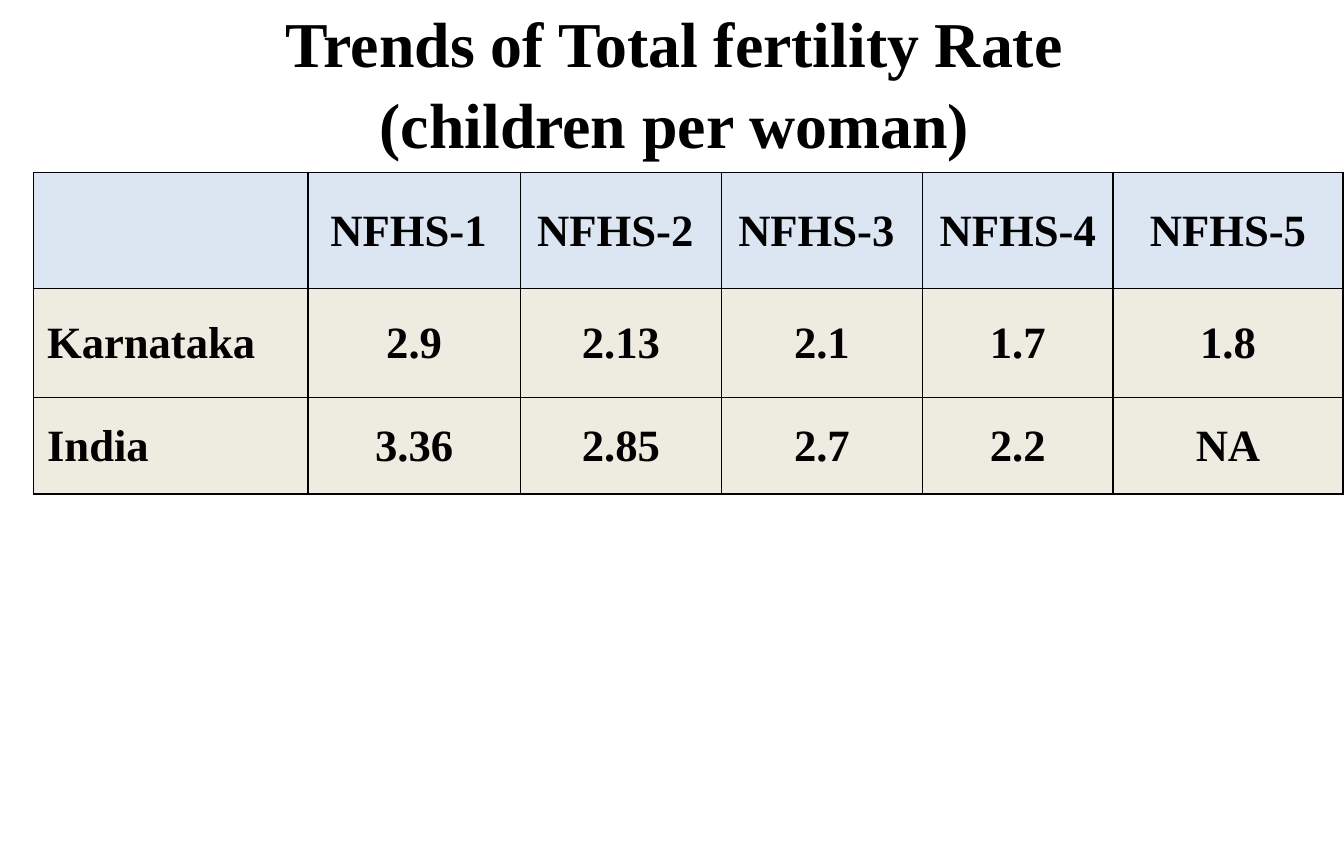
from lxml import etree
from pptx import Presentation
from pptx.dml.color import RGBColor
from pptx.enum import text
from pptx.oxml import ns
from pptx.util import Inches, Pt

HEADING = "Trends of Total fertility Rate \v(children per woman) "
FERTILITY = [
    ["", "NFHS-1 ", "NFHS-2 ", "NFHS-3 ", "NFHS-4", "NFHS-5"],
    ["Karnataka", "2.9", "2.13", "2.1", "1.7", "1.8"],
    ["India", "3.36", "2.85", "2.7", "2.2", "NA"],
]
SURVEY_WIDTHS = [2.39, 1.85, 1.75, 1.75, 1.66, 2]
REGION_HEIGHTS = [1.01, 0.95, 0.84]

THEME = {
    "font": "Times New Roman",
    "ink": "000000",
    "header": "DCE6F2",
    "body": "EEECE1",
    "title_size": 40,
    "cell_size": 28,
    "border": 1,
}
HEADER_MARGINS = dict(zip(("left", "top", "right", "bottom"), (0.01, 0.01, 0.01, 0)))
BODY_MARGINS = dict(zip(("left", "top", "right", "bottom"), (0.12, 0.05, 0.12, 0.05)))


def apply(target, formats):
    for name, value in formats.items():
        setattr(target, name, value)


def style(paragraph, size, align):
    paragraph.alignment = align
    for run in paragraph.runs:
        apply(run.font, {"name": THEME["font"], "size": Pt(size), "bold": True})
        run.font.color.rgb = RGBColor.from_string(THEME["ink"])


def add_borders(cell):
    properties = cell._tc.get_or_add_tcPr()
    for side in ("lnL", "lnR", "lnT", "lnB"):
        line = etree.SubElement(properties, ns.qn("a:" + side), w=str(Pt(THEME["border"])))
        fill = etree.SubElement(line, ns.qn("a:solidFill"))
        etree.SubElement(fill, ns.qn("a:srgbClr"), val=THEME["ink"])


def add_heading(slide):
    heading = slide.shapes.title
    apply(heading, {"left": Inches(1.75), "top": Inches(0),
                    "width": Inches(8.38), "height": Inches(1.45)})
    frame = heading.text_frame
    apply(frame, {"text": HEADING, "word_wrap": True,
                  "auto_size": text.MSO_AUTO_SIZE.NONE,
                  "vertical_anchor": text.MSO_ANCHOR.BOTTOM})
    paragraph = frame.paragraphs[0]
    paragraph.line_spacing = 1.05
    style(paragraph, THEME["title_size"], text.PP_ALIGN.CENTER)


def add_fertility_table(slide):
    fertility = slide.shapes.add_table(
        len(FERTILITY), len(SURVEY_WIDTHS), Inches(0.29), Inches(1.5),
        Inches(sum(SURVEY_WIDTHS)), Inches(sum(REGION_HEIGHTS))).table
    for survey, width in zip(fertility.columns, SURVEY_WIDTHS):
        survey.width = Inches(width)
    for region, height in zip(fertility.rows, REGION_HEIGHTS):
        region.height = Inches(height)

    for row, values in enumerate(FERTILITY):
        margins = BODY_MARGINS if row else HEADER_MARGINS
        for column, value in enumerate(values):
            cell = fertility.cell(row, column)
            apply(cell, {"text": value, "vertical_anchor": text.MSO_ANCHOR.MIDDLE})
            apply(cell, {"margin_" + side: Inches(gap) for side, gap in margins.items()})
            add_borders(cell)
            cell.fill.solid()
            cell.fill.fore_color.rgb = RGBColor.from_string(THEME["body" if row else "header"])
            align = text.PP_ALIGN.CENTER if column else text.PP_ALIGN.LEFT
            style(cell.text_frame.paragraphs[0], THEME["cell_size"], align)


def main():
    deck = Presentation()
    apply(deck, {"slide_width": Inches(11.7), "slide_height": Inches(7.5)})
    slide = deck.slides.add_slide(deck.slide_layouts.get_by_name("Title Only"))
    add_fertility_table(slide)
    add_heading(slide)
    deck.save("out.pptx")


if __name__ == "__main__":
    main()
